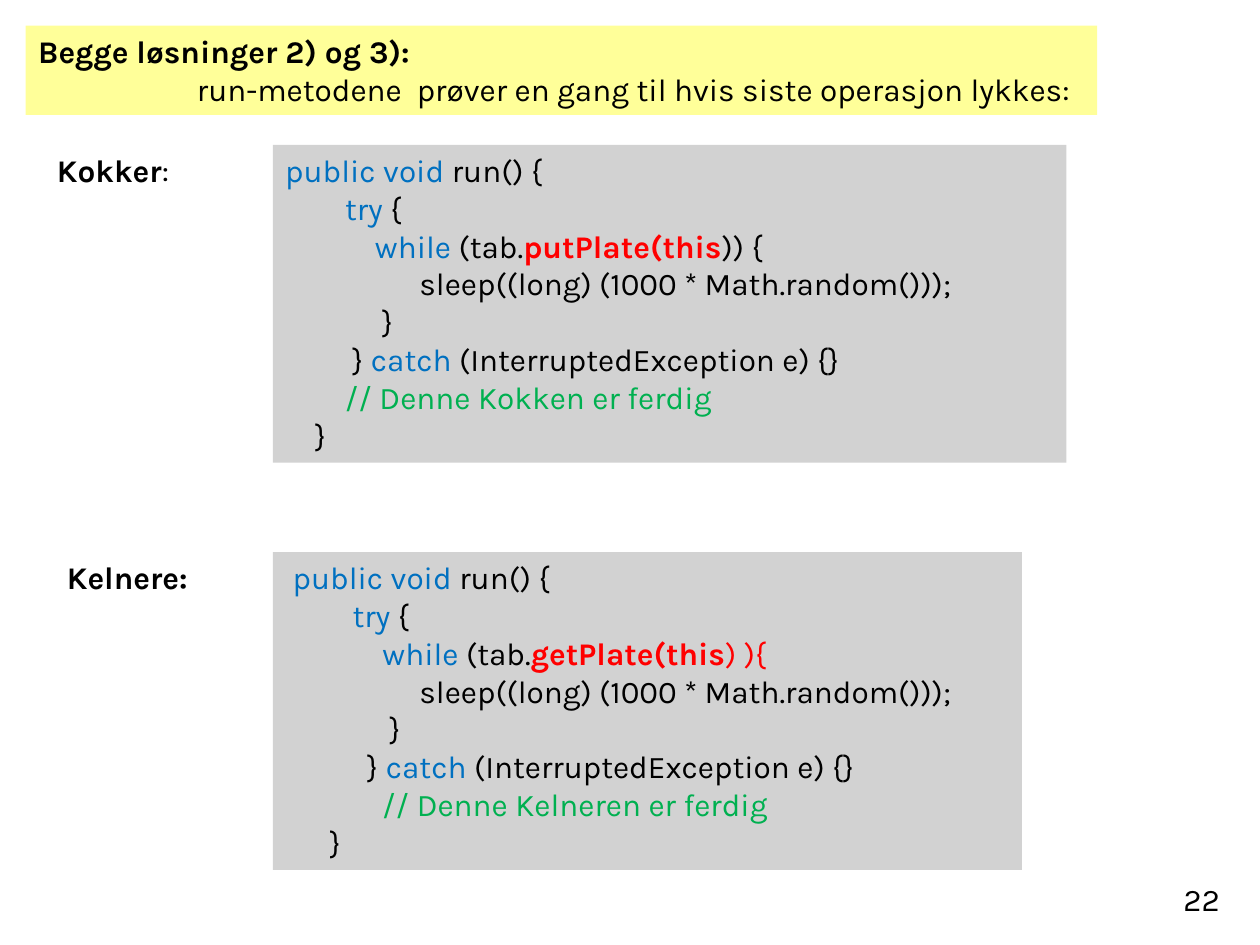
from pptx import Presentation
from pptx.dml.color import RGBColor
from pptx.enum.shapes import MSO_SHAPE
from pptx.enum.text import MSO_ANCHOR, PP_ALIGN
from pptx.util import Cm, Pt

RECT = MSO_SHAPE.RECTANGLE
TOP, BOTTOM = MSO_ANCHOR.TOP, MSO_ANCHOR.BOTTOM
LEFT, RIGHT = PP_ALIGN.LEFT, PP_ALIGN.RIGHT

FONT, SIZE = "Karla", Pt(18)
COLORS = {
    "text": "000000",
    "key": "0070C0",
    "call": "FF0000",
    "note": "00B050",
    "code": "D2D2D2",
    "head": "FFFF99",
}

# Each line is a list of (text, color name, bold) runs
SLEEP = [("                  sleep((long) (1000 * Math.random()));", "text", False)]
COOK = [
    [("public void ", "key", False), ("run() {", "text", False)],
    [("        ", "text", False), ("try", "key", False), (" {", "text", False)],
    [("            ", "text", False), ("while", "key", False), (" (tab.", "text", False),
     ("putPlate(this", "call", True), (")) {", "text", False)],
    SLEEP,
    [("             }", "text", False)],
    [("         } ", "text", False), ("catch", "key", False),
     (" (InterruptedException e) {}", "text", False)],
    [("        // Denne Kokken er ferdig", "note", False)],
    [("    }", "text", False)],
]
WAITER = [
    [(" ", "text", False), ("public void ", "key", False), ("run() {", "text", False)],
    [("         ", "text", False), ("try", "key", False), (" {", "text", False)],
    [("             ", "text", False), ("while", "key", False), (" (tab.", "text", False),
     ("getPlate(this", "call", True), (") ){", "call", False)],
    SLEEP,
    [("              }", "text", False)],
    [("           } ", "text", False), ("catch", "key", False),
     (" (InterruptedException e) {}", "text", False)],
    [("             // Denne Kelneren er ferdig", "note", False)],
    [("      }", "text", False)],
]


def write(frame, lines, align=LEFT, anchor=TOP):
    frame.word_wrap = True
    frame.vertical_anchor = anchor
    for num, line in enumerate(lines):
        para = frame.add_paragraph() if num else frame.paragraphs[0]
        para.alignment = align
        for text, color, bold in line:
            run = para.add_run()
            run.text = text
            font = run.font
            font.name, font.size, font.bold = FONT, SIZE, bold
            font.color.rgb = RGBColor.from_string(COLORS[color])


def add_panel(slide, x, y, w, h, color, lines):
    panel = slide.shapes.add_shape(RECT, Cm(x), Cm(y), Cm(w), Cm(h))
    panel.shadow.inherit = False
    panel.fill.solid()
    panel.fill.fore_color.rgb = RGBColor.from_string(COLORS[color])
    panel.line.fill.background()
    write(panel.text_frame, lines)
    return panel


def add_label(slide, x, y, w, h, line, align=LEFT, anchor=TOP):
    box = slide.shapes.add_textbox(Cm(x), Cm(y), Cm(w), Cm(h))
    write(box.text_frame, [line], align, anchor)


def add_head(slide, x, y, w, h):
    panel = add_panel(slide, x, y, w, h, "head", [
        [("Begge løsninger 2) og 3):", "text", True)],
        [("run-metodene  prøver en gang til hvis siste operasjon lykkes:", "text", False)],
    ])
    # Indent the second line
    props = panel.text_frame.paragraphs[1]._p.get_or_add_pPr()
    props.set("marL", str(Cm(3.2)))


def add_role(slide, x, y, w, h, inset, label, code):
    """Label on the left, code panel 5.5 cm from the left edge x."""
    add_panel(slide, x + 5.5, y, w - 5.5, h, "code", code)
    add_label(slide, x + inset, y, 3.2, 1, label)


def main():
    deck = Presentation()
    deck.slide_width, deck.slide_height = Cm(25.4), Cm(19.05)
    slide = deck.slides.add_slide(deck.slide_layouts[6])

    # Heading
    add_head(slide, 0.52, 0.52, 21.6, 1.8)

    # Cooks and waiters
    add_role(slide, 0, 2.92, 21.5, 6.41, 0.9,
             [("Kokker", "text", True), (":", "text", False)], COOK)
    add_role(slide, 0, 11.13, 20.6, 6.41, 1.1, [("Kelnere:", "text", True)], WAITER)

    # Page number
    add_label(slide, 19.56, 17.35, 5.28, 1.27, [("22", "text", False)], RIGHT, BOTTOM)

    deck.save("out.pptx")


if __name__ == "__main__":
    main()
